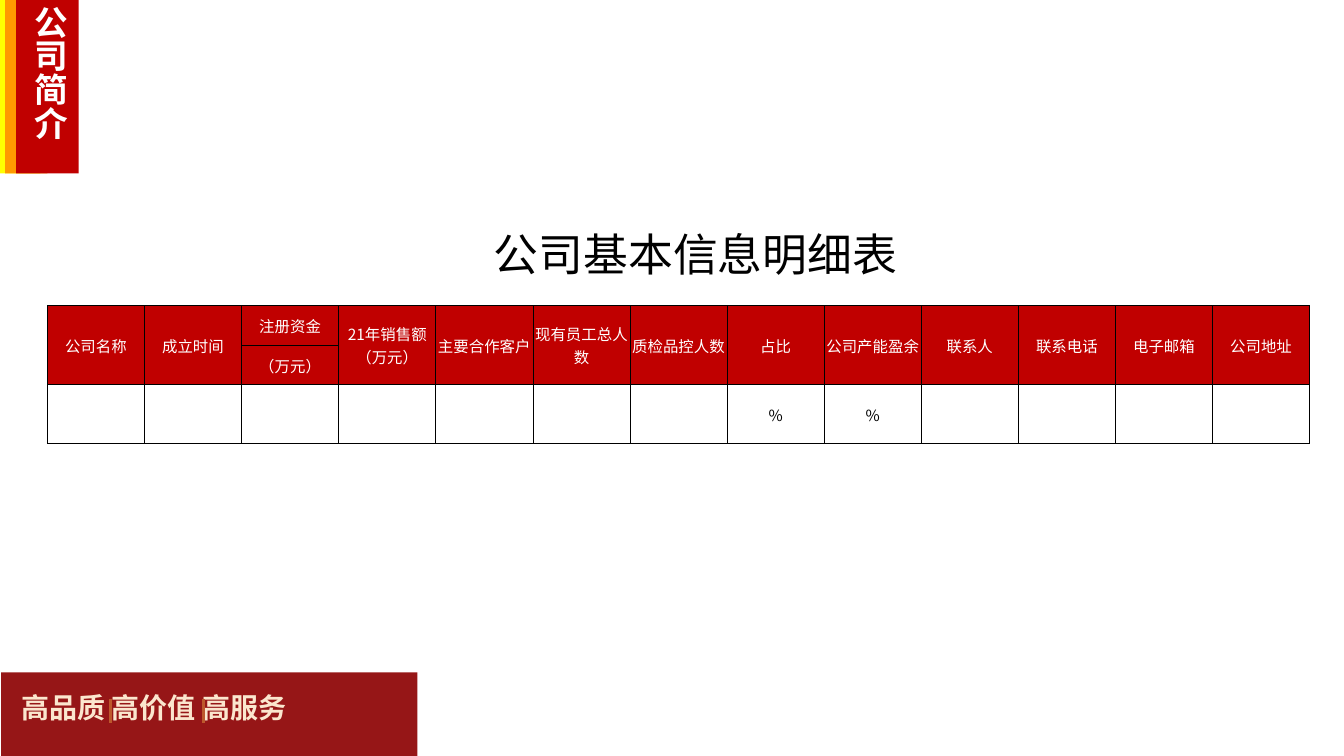
"""Build the company profile slide with its basic information table."""
import pptx
import pptx.util
import pptx.dml.color
import pptx.enum.shapes
import pptx.enum.text
import pptx.oxml
import lxml.etree

THEME = {
    "red": "C00000", "orange": "FF9900", "yellow": "FFFF00",
    "footer": "961617", "cream": "FBE6CE", "divider": "BD582C",
    "white": "FFFFFF", "black": "000000",
    "cjk": "Noto Sans CJK SC", "latin": "Roboto",
    "title": 32, "tab": 24, "slogan": 20, "cell": 11,
}
RGB = pptx.dml.color.RGBColor.from_string
CENTER = pptx.enum.text.PP_ALIGN.CENTER
LEFT = pptx.enum.text.PP_ALIGN.LEFT
A = "http://schemas.openxmlformats.org/drawingml/2006/main"

prs = pptx.Presentation()
prs.slide_width = pptx.util.Inches(13.33)
prs.slide_height = pptx.util.Inches(7.5)
s = prs.slides.add_slide(prs.slide_layouts[6])


def share(left, top, width, height):
    """Turn percentages of the slide into lengths."""
    sides = (prs.slide_width, prs.slide_height) * 2
    return [int(side * pct / 100) for side, pct in zip(sides, (left, top, width, height))]


def write(p, text, size, color, font="cjk", bold=False, align=CENTER):
    """Put one formatted run into a paragraph."""
    p.alignment = align
    r = p.add_run()
    r.text = text
    look = {"size": pptx.util.Pt(THEME[size]), "name": THEME[font], "bold": bold}
    for key, value in look.items():
        setattr(r.font, key, value)
    r.font.color.rgb = RGB(THEME[color])
    ea = lxml.etree.SubElement(r.font._element, f"{{{A}}}ea")
    ea.set("typeface", THEME["cjk"])


bars = [
    ("footer", 0.08, 88.93, 30.98, 11.07),
    ("yellow", -0.15, 0, 3.15, 22.93),
    ("orange", 0.38, 0, 3.15, 22.93),
    ("red", 1.2, 0, 4.65, 22.93),
]
for color, *box in bars:
    sp = s.shapes.add_shape(pptx.enum.shapes.MSO_SHAPE.RECTANGLE, *share(*box))
    sp.shadow.inherit = False
    sp.fill.solid()
    sp.fill.fore_color.rgb = RGB(THEME[color])
    sp.line.fill.background()

labels = [
    ("高品质 高价值 高服务", (0.83, 91.07, 28.43, 5.87), 0.07, "slogan", "cream", "latin", True, LEFT),
    ("公司简介", (1.8, 0, 2.4, 22.93), 0.08, "tab", "white", "cjk", True, CENTER),
    ("公司基本信息明细表", (36.01, 29.87, 54.84, 8.53), 0.09, "title", "black", "cjk", False, LEFT),
]
for text, box, inset, *look in labels:
    tf = s.shapes.add_textbox(*share(*box)).text_frame
    tf.word_wrap = True
    tf.margin_top = pptx.util.Inches(inset)
    p = tf.paragraphs[0]
    p.line_spacing = 0.84
    write(p, text, *look)

for x in (8.25, 15.15):
    left, top, right, bottom = share(x, 92.45, x, 95.6)
    line = s.shapes.add_connector(
        pptx.enum.shapes.MSO_CONNECTOR.STRAIGHT, left, top, right, bottom)
    line.line.color.rgb = RGB(THEME["divider"])
    line.line.width = pptx.util.Pt(2.25)
    lxml.etree.SubElement(line._element.spPr, f"{{{A}}}effectLst")

headers = ["公司名称", "成立时间", "注册资金", "21年销售额（万元）", "主要合作客户",
           "现有员工总人数", "质检品控人数", "占比", "公司产能盈余", "联系人",
           "联系电话", "电子邮箱", "公司地址"]
split = headers.index("注册资金")
texts = {(0, col): text for col, text in enumerate(headers)}
texts[1, split] = "（万元）"
for name in ("占比", "公司产能盈余"):
    texts[2, headers.index(name)] = "%"

row_shares = (5.33, 5.07, 7.87)
box = share(3.53, 40.4, 93.92, sum(row_shares))
table = s.shapes.add_table(len(row_shares), len(headers), *box).table
table.first_row = table.horz_banding = False
for column in table.columns:
    column.width = box[2] // len(headers)
for row, pct in zip(table.rows, row_shares):
    row.height = int(prs.slide_height * pct / 100)

edge = pptx.util.Inches(0.01)
cell_format = {"margin_left": edge, "margin_right": edge, "margin_top": edge,
               "margin_bottom": 0,
               "vertical_anchor": pptx.enum.text.MSO_ANCHOR.MIDDLE}
for row in range(len(row_shares)):
    for col in range(len(headers)):
        cell = table.cell(row, col)
        for key, value in cell_format.items():
            setattr(cell, key, value)
        tcPr = cell._tc.get_or_add_tcPr()
        for side in ("lnL", "lnR", "lnT", "lnB"):
            tcPr.append(pptx.oxml.parse_xml(
                f'<a:{side} xmlns:a="{A}" w="{pptx.util.Pt(0.5)}"><a:solidFill>'
                f'<a:srgbClr val="{THEME["black"]}"/></a:solidFill></a:{side}>'))
        if row < 2:
            cell.fill.solid()
            cell.fill.fore_color.rgb = RGB(THEME["red"])
        else:
            cell.fill.background()
        if (row, col) in texts:
            write(cell.text_frame.paragraphs[0], texts[row, col], "cell",
                  "white" if row < 2 else "black")

for col in range(len(headers)):
    if col != split:
        table.cell(0, col).merge(table.cell(1, col))

prs.save("out.pptx")
